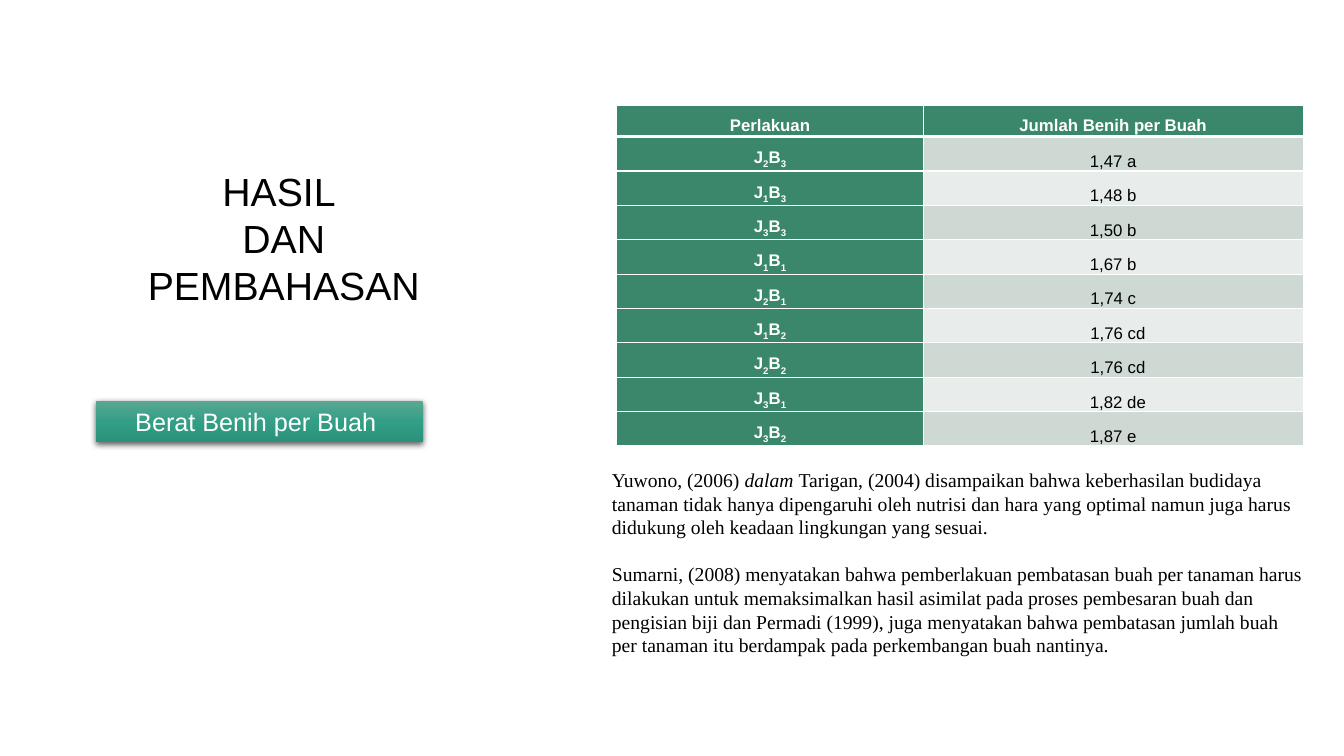
import pptx
import pptx.dml.color
import pptx.enum.shapes
import pptx.enum.text
import pptx.oxml
import pptx.util

Pt = pptx.util.Pt
RGBColor = pptx.dml.color.RGBColor
ALIGN = pptx.enum.text.PP_ALIGN
ANCHOR = pptx.enum.text.MSO_ANCHOR
NS = 'xmlns:a="http://schemas.openxmlformats.org/drawingml/2006/main"'

WHITE = RGBColor(0xFF, 0xFF, 0xFF)
BLACK = RGBColor(0, 0, 0)
GREEN = RGBColor(0x3A, 0x87, 0x6B)
BANDS = (RGBColor(0xCE, 0xD9, 0xD4), RGBColor(0xE8, 0xED, 0xEB))
LABEL_STOPS = (
    (0, RGBColor(0x59, 0xA7, 0x92)),
    (50, RGBColor(0x34, 0x9F, 0x87)),
    (100, RGBColor(0x2A, 0x91, 0x7A)),
)

HEADERS = ("Perlakuan", "Jumlah Benih per Buah")
RESULTS = (
    ("J2B3", "1,47 a"), ("J1B3", "1,48 b"), ("J3B3", "1,50 b"),
    ("J1B1", "1,67 b"), ("J2B1", "1,74 c"), ("J1B2", "1,76 cd"),
    ("J2B2", "1,76 cd"), ("J3B1", "1,82 de"), ("J3B2", "1,87 e"),
)
# Each paragraph is a list of (text, italic) runs
DISCUSSION = (
    (("Yuwono, (2006) ", False), ("dalam ", True),
     ("Tarigan, (2004) disampaikan bahwa keberhasilan budidaya tanaman tidak "
      "hanya dipengaruhi oleh nutrisi dan hara yang optimal namun juga harus "
      "didukung oleh keadaan lingkungan yang sesuai.", False)),
    (("Sumarni, (2008) menyatakan bahwa pemberlakuan pembatasan buah per "
      "tanaman harus dilakukan untuk memaksimalkan hasil asimilat pada proses "
      "pembesaran buah dan pengisian biji dan Permadi (1999), juga menyatakan "
      "bahwa pembatasan jumlah buah per tanaman itu berdampak pada "
      "perkembangan buah nantinya.", False),),
)


def style(p, size, color, name="Arial", bold=False, align=ALIGN.CENTER):
    p.alignment = align
    p.font.size, p.font.name, p.font.bold = Pt(size), name, bold
    p.font.color.rgb = color


def add_text_frame(slide, left, top, width, height):
    s = slide.shapes.add_textbox(Pt(left), Pt(top), Pt(width), Pt(height))
    s.text_frame.word_wrap = True
    return s.text_frame


def add_title(slide, left, top, width, height):
    tf = add_text_frame(slide, left, top, width, height)
    for i, line in enumerate(("HASIL ", "DAN", "PEMBAHASAN")):
        p = tf.paragraphs[0] if i == 0 else tf.add_paragraph()
        p.text = line
        p.line_spacing = Pt(33.6)
        style(p, 28, BLACK)


def add_label(slide, left, top, width, height):
    s = slide.shapes.add_shape(pptx.enum.shapes.MSO_SHAPE.RECTANGLE,
                               Pt(left), Pt(top), Pt(width), Pt(height))
    s.line.fill.background()
    s.shadow.inherit = False
    # Three-stop vertical gradient
    stops = "".join(f'<a:gs pos="{pos * 1000}"><a:srgbClr val="{color}"/></a:gs>'
                    for pos, color in LABEL_STOPS)
    props = s._element.spPr
    props.insert(2, pptx.oxml.parse_xml(
        f'<a:gradFill {NS} rotWithShape="1"><a:gsLst>{stops}</a:gsLst>'
        '<a:lin ang="5400000" scaled="0"/></a:gradFill>'))
    # Soft shadow below
    props[-1].append(pptx.oxml.parse_xml(
        f'<a:outerShdw {NS} blurRad="{Pt(4.5)}" dist="{Pt(1.5)}" dir="5400000" '
        'rotWithShape="0"><a:srgbClr val="000000"><a:alpha val="63000"/>'
        '</a:srgbClr></a:outerShdw>'))
    tf = s.text_frame
    tf.word_wrap = True
    tf.vertical_anchor = ANCHOR.MIDDLE
    tf.text = "Berat Benih per Buah "
    style(tf.paragraphs[0], 18, WHITE)


def add_cell(cell, text, fill, color, bold, anchor, header=False, indent=0):
    cell.fill.solid()
    cell.fill.fore_color.rgb = fill
    cell.vertical_anchor = anchor
    cell.margin_left, cell.margin_right = Pt(5 + indent), Pt(5)
    cell.margin_top = cell.margin_bottom = 0
    p = cell.text_frame.paragraphs[0]
    p.line_spacing = 1.5
    style(p, 12, color, bold=bold)
    # Treatment codes carry subscript digits
    for part in (text if text.startswith("J") and not header else [text]):
        r = p.add_run()
        r.text = part
        if part.isdigit():
            r._r.get_or_add_rPr().set("baseline", "-25000")
    # White borders, heavier under the header
    props = cell._tc.get_or_add_tcPr()
    for i, side in enumerate(("lnL", "lnR", "lnT", "lnB")):
        weight = Pt(3 if header and side == "lnB" else 1)
        props.insert(i, pptx.oxml.parse_xml(
            f'<a:{side} {NS} w="{weight}"><a:solidFill><a:srgbClr val="{WHITE}"/>'
            f'</a:solidFill></a:{side}>'))


def add_results(slide, left, top, widths, header_height, row_height):
    height = header_height + row_height * len(RESULTS)
    table = slide.shapes.add_table(len(RESULTS) + 1, 2, Pt(left), Pt(top),
                                   Pt(sum(widths)), Pt(height)).table
    table.first_col = True
    for column, width in zip(table.columns, widths):
        column.width = Pt(width)
    table.rows[0].height = Pt(header_height)
    for i, text in enumerate(HEADERS):
        add_cell(table.cell(0, i), text, GREEN, WHITE, True, ANCHOR.MIDDLE, True)
    for i, (code, value) in enumerate(RESULTS, 1):
        table.rows[i].height = Pt(row_height)
        add_cell(table.cell(i, 0), code, GREEN, WHITE, True, ANCHOR.MIDDLE)
        # Values with two letters sit slightly to the right
        indent = 6.67 if len(value) > 6 else 0
        add_cell(table.cell(i, 1), value, BANDS[(i - 1) % 2], BLACK, False,
                 ANCHOR.BOTTOM, indent=indent)


def add_discussion(slide, left, top, width, height):
    tf = add_text_frame(slide, left, top, width, height)
    for i, runs in enumerate(DISCUSSION):
        p = tf.paragraphs[0] if i == 0 else tf.add_paragraph()
        style(p, 14, BLACK, "Times New Roman", align=ALIGN.LEFT)
        p.line_spacing = Pt(16.9)
        p.space_before = Pt(16.9 if i else 0)
        for text, italic in runs:
            r = p.add_run()
            r.text = text
            r.font.italic = italic


def main():
    prs = pptx.Presentation()
    prs.slide_width, prs.slide_height = Pt(960), Pt(540)
    slide = prs.slides.add_slide(prs.slide_layouts[6])
    add_label(slide, 68.4, 286.5, 233.5, 29.1)
    add_title(slide, 90, 116, 225.4, 108.7)
    add_discussion(slide, 430, 330.5, 510.5, 143.3)
    add_results(slide, 440.6, 75.6, (218.9, 271.4), 22, 24.5)
    prs.save("out.pptx")


if __name__ == "__main__":
    main()
